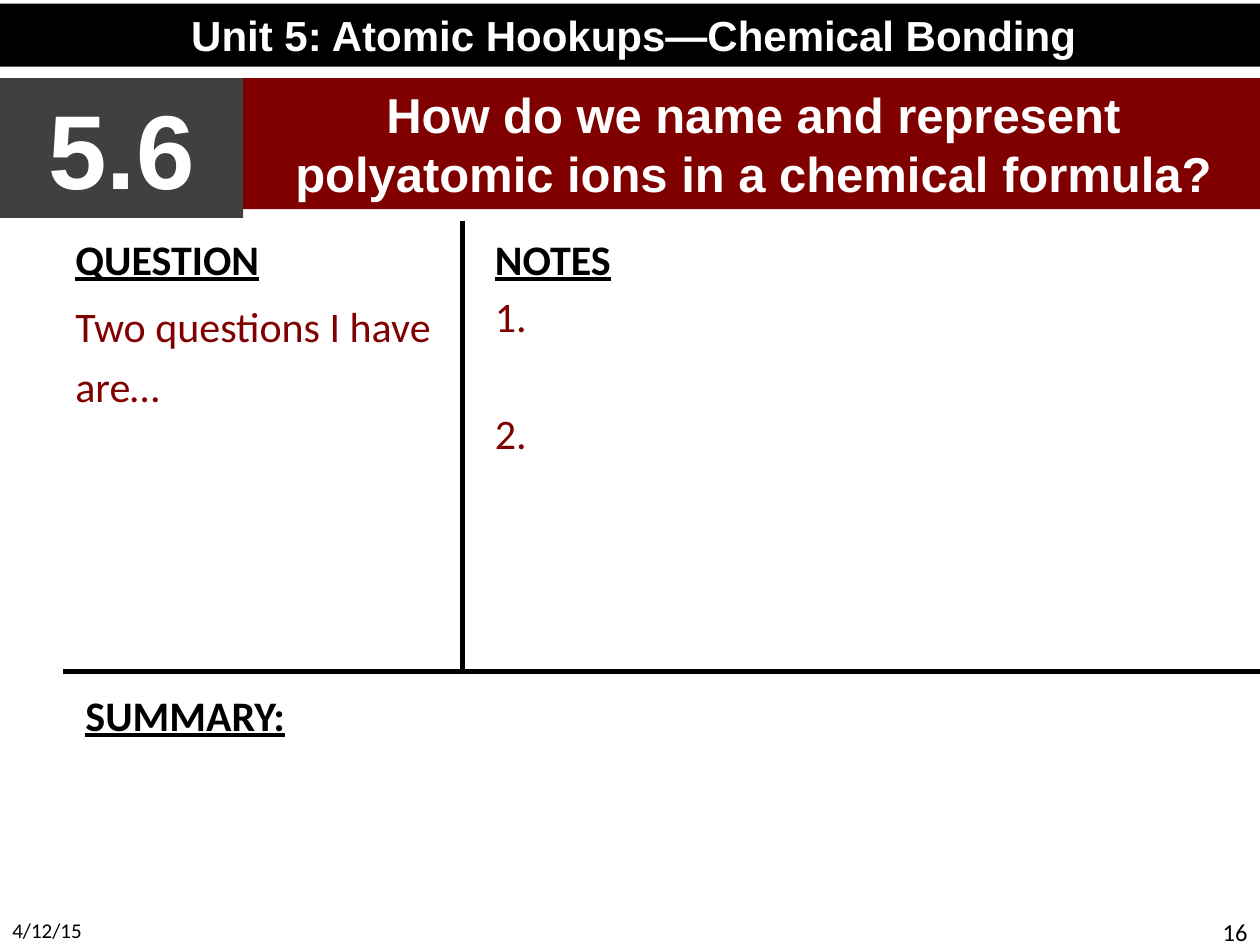
"""Build the Unit 5.6 note-taking slide."""
import pptx
import pptx.dml.color
import pptx.enum.shapes
import pptx.enum.text
import pptx.oxml
import pptx.util
from pptx.util import Inches, Pt

ALIGN = pptx.enum.text.PP_ALIGN
THEME = {
    "black": "000000", "white": "FFFFFF", "red": "800000", "gray": "404040",
    "head": {"name": "Calibri", "size": Pt(24), "bold": True, "underline": True},
    "body": {"name": "Calibri", "size": Pt(24)},
    "date": {"name": "Calibri", "size": Pt(12)},
    "page": {"name": "Calibri", "size": Pt(14)},
    "unit": {"name": "Arial", "size": Pt(24), "bold": True},
    "code": {"name": "Arial", "size": Pt(60), "bold": True},
    "title": {"name": "Arial", "size": Pt(28), "bold": True},
    "rule": Pt(3),
}
LEFT, SPLIT, BASE = 0.5, 3.67, 5.33
FOOT, WIDE = 7.23, 2.33

# box, fill, paragraphs of (text, style, colour, format)
MID = {"alignment": ALIGN.CENTER}
GAP = {"space_before": Pt(4)}
PARTS = [
    ((0, FOOT, WIDE, 0.27), None, [("4/12/15", "date", "black", {})]),
    ((10 - WIDE, FOOT, WIDE, 0.27), None,
     [("16", "page", "black", {"alignment": ALIGN.RIGHT})]),
    ((LEFT, 1.8, SPLIT - LEFT, 3.45), None, [
        ("QUESTION", "head", "black", {}),
        ("Two questions I have are…", "body", "red", {**GAP, "line_spacing": 1.2})]),
    ((0, 0.03, 10.06, 0.5), "black",
     [("Unit 5: Atomic Hookups—Chemical Bonding", "unit", "white", MID)]),
    ((0, 0.62, 1.93, 1.11), "gray", [("5.6", "code", "white", MID)]),
    ((1.93, 0.62, 8.1, 1.04), "red",
     [("How do we name and represent polyatomic ions in a chemical formula?",
       "title", "white", MID)]),
    ((3.83, 1.8, 6.17, 3.45), None, [
        ("NOTES", "head", "black", {}),
        ("1.", "body", "red", GAP),
        ("2.", "body", "red", {"space_before": Pt(38)})]),
    ((0.58, 5.42, 9.42, 2.08), None, [("SUMMARY:", "head", "black", {})]),
]
RULES = [(SPLIT, 1.75, SPLIT, BASE), (10, BASE, LEFT, BASE)]


def tint(key):
    return pptx.dml.color.RGBColor.from_string(THEME[key])


def apply(item, form):
    for key, value in form.items():
        setattr(item, key, value)


def put(slide, box, fill, paras):
    place = [Inches(n) for n in box]
    if fill:
        shape = slide.shapes.add_shape(pptx.enum.shapes.MSO_SHAPE.RECTANGLE, *place)
        shape.shadow.inherit = False
        shape.fill.solid()
        shape.fill.fore_color.rgb = tint(fill)
        shape.line.fill.background()
    else:
        shape = slide.shapes.add_textbox(*place)
    frame = shape.text_frame
    apply(frame, {"word_wrap": True, "vertical_anchor": pptx.enum.text.MSO_ANCHOR.TOP})
    for i, (text, style, hue, form) in enumerate(paras):
        para = frame.add_paragraph() if i else frame.paragraphs[0]
        apply(para, form)
        run = para.add_run()
        run.text = text
        apply(run.font, THEME[style])
        run.font.color.rgb = tint(hue)


def rule(slide, ends):
    line = slide.shapes.add_connector(
        pptx.enum.shapes.MSO_CONNECTOR.STRAIGHT, *[Inches(n) for n in ends])
    line.line.color.rgb = tint("black")
    line.line.width = THEME["rule"]
    tag = pptx.oxml.ns.qn("a:effectLst")
    line._element.spPr.append(pptx.oxml.xmlchemy.OxmlElement("a:effectLst")
                              if tag else None)


def main():
    deck = pptx.Presentation()
    apply(deck, {"slide_width": Inches(10), "slide_height": Inches(7.5)})
    slide = deck.slides.add_slide(deck.slide_layouts[6])
    for part in PARTS:
        put(slide, *part)
    for ends in RULES:
        rule(slide, ends)
    deck.save("out.pptx")


if __name__ == "__main__":
    main()
